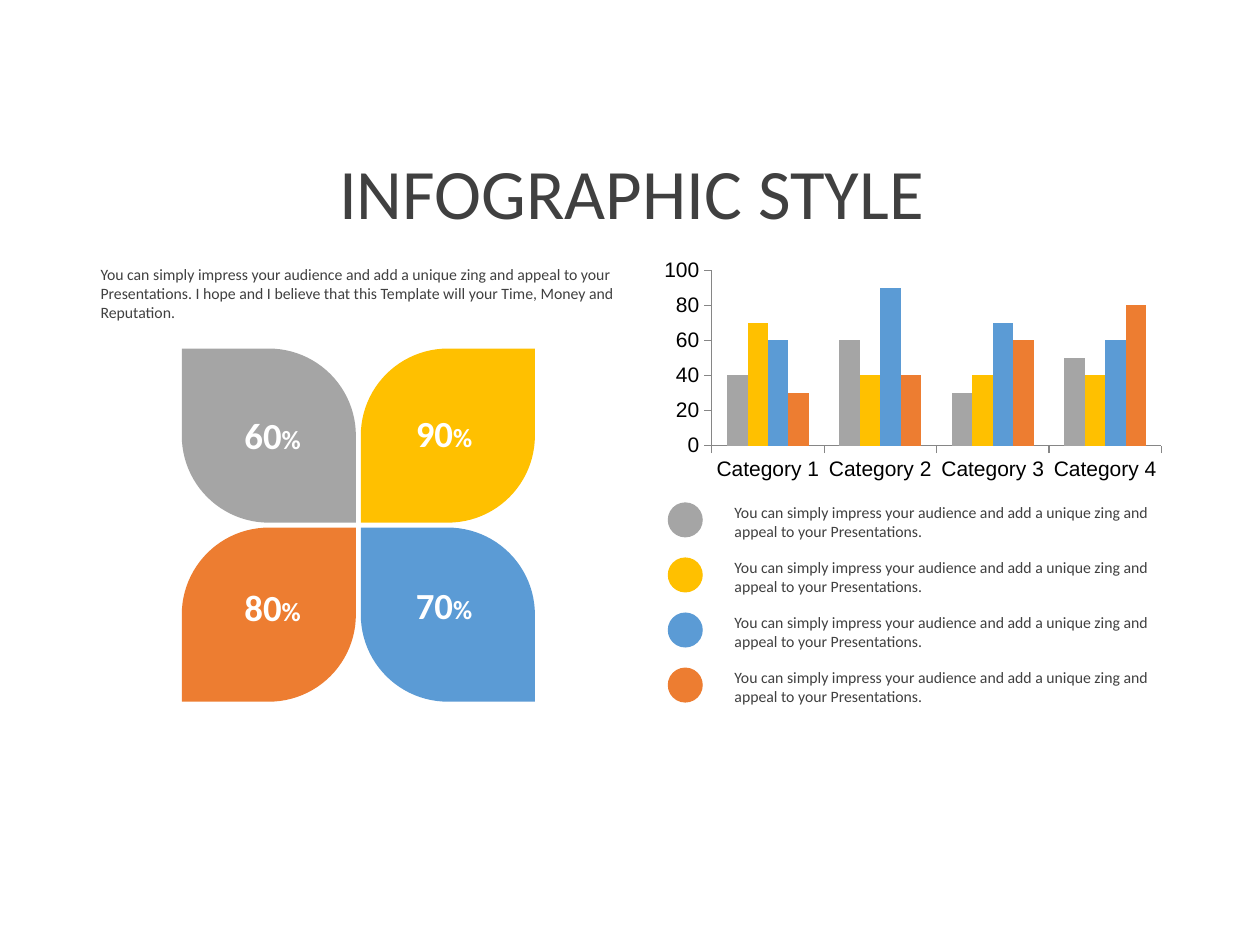
from pptx import Presentation
from pptx.chart.data import CategoryChartData
from pptx.dml.color import RGBColor
from pptx.enum.chart import XL_CHART_TYPE, XL_TICK_MARK
from pptx.enum.shapes import MSO_SHAPE
from pptx.enum.text import MSO_ANCHOR, MSO_AUTO_SIZE, PP_ALIGN
from pptx.util import Pt

GRAY, YELLOW, BLUE, ORANGE = "A5A5A5", "FFC000", "5B9BD5", "ED7D31"
DARK, WHITE, AXIS = "404040", "FFFFFF", "868686"
PITCH = "You can simply impress your audience and add a unique zing and appeal to your Presentations."
INTRO = PITCH + " I hope and I believe that this Template will your Time, Money and Reputation."


def color(hex_code):
    """Turn a hex string into a colour."""
    return RGBColor.from_string(hex_code)


def write(frame, *parts, size=9, ink=DARK, bold=False, align=PP_ALIGN.LEFT,
          anchor=MSO_ANCHOR.TOP):
    """Fill a frame with one paragraph of parts, each a text or a (text, size) pair."""
    frame.word_wrap = True
    frame.auto_size = MSO_AUTO_SIZE.NONE
    frame.vertical_anchor = anchor
    paragraph = frame.paragraphs[0]
    paragraph.alignment = align
    for part in parts:
        text, points = part if isinstance(part, tuple) else (part, size)
        run = paragraph.add_run()
        run.text = text
        run.font.name = "Calibri"
        run.font.size = Pt(points)
        run.font.bold = bold
        run.font.color.rgb = color(ink)


def add_text(slide, box, *parts, **style):
    """Add a text box in the given box."""
    write(slide.shapes.add_textbox(*map(Pt, box)).text_frame, *parts, **style)


def add_solid(slide, kind, box, fill):
    """Add a filled preset shape with no outline."""
    solid = slide.shapes.add_shape(kind, *map(Pt, box))
    solid.shadow.inherit = False
    solid.fill.solid()
    solid.fill.fore_color.rgb = color(fill)
    solid.line.fill.background()
    return solid


def add_title(slide, box):
    """Place and format the slide title."""
    title = slide.shapes.title
    title.left, title.top, title.width, title.height = map(Pt, box)
    frame = title.text_frame
    frame.margin_left = frame.margin_right = Pt(5)
    frame.margin_top = frame.margin_bottom = Pt(2.7)
    write(frame, "INFOGRAPHIC STYLE", size=40.5, align=PP_ALIGN.CENTER,
          anchor=MSO_ANCHOR.MIDDLE)


def add_petals(slide, box):
    """Draw a two by two flower of petals with their percentages."""
    left, top, width, height = box
    gap = 2.8
    side_x, side_y = (width - gap) / 2, (height - gap) / 2
    petals = [("60", GRAY), ("90", YELLOW), ("80", ORANGE), ("70", BLUE)]
    for index, (share, fill) in enumerate(petals):
        row, column = divmod(index, 2)
        petal = add_solid(slide, MSO_SHAPE.ROUND_2_DIAG_RECTANGLE,
                          (left + column * (side_x + gap), top + row * (side_y + gap),
                           side_x, side_y), fill)
        rounded = 0.5 if row != column else 0
        petal.adjustments[0] = rounded
        petal.adjustments[1] = 0.5 - rounded
        add_text(slide, (left + 24.2 + 98 * column, top + 33.2 + 98 * row - column, 55.4, 32.4),
                 share, ("%", 15), size=21, ink=WHITE, bold=True,
                 align=PP_ALIGN.CENTER, anchor=MSO_ANCHOR.MIDDLE)


def add_columns(slide, box):
    """Add the clustered column chart."""
    series = [((40, 60, 30, 50), GRAY), ((70, 40, 40, 40), YELLOW),
              ((60, 90, 70, 60), BLUE), ((30, 40, 60, 80), ORANGE)]
    data = CategoryChartData()
    data.categories = [f"Category {number}" for number in range(1, 5)]
    for number, (values, _) in enumerate(series, 1):
        data.add_series(f"Series {number}", values)
    chart = slide.shapes.add_chart(XL_CHART_TYPE.COLUMN_CLUSTERED, *map(Pt, box), data).chart
    chart.has_legend = False
    chart.has_title = False
    chart.font.name = "Calibri"
    chart.font.size = Pt(18)
    chart.font.color.rgb = color("000000")
    plot = chart.plots[0]
    plot.gap_width = 150
    plot.overlap = 0
    plot.vary_by_categories = False
    for columns, (_, fill) in zip(plot.series, series):
        columns.format.fill.solid()
        columns.format.fill.fore_color.rgb = color(fill)
    for axis in (chart.category_axis, chart.value_axis):
        axis.has_major_gridlines = False
        axis.major_tick_mark = XL_TICK_MARK.OUTSIDE
        axis.minor_tick_mark = XL_TICK_MARK.NONE
        axis.format.line.color.rgb = color(AXIS)
        axis.format.line.width = Pt(0.75)
        axis.tick_labels.font.name = "Arial"
        axis.tick_labels.font.size = Pt(12)
        axis.tick_labels.font.color.rgb = color("000000")
    chart.value_axis.minimum_scale = 0
    chart.value_axis.maximum_scale = 100
    chart.value_axis.major_unit = 20


def add_key(slide, box):
    """List the series colours, each with its description."""
    left, top, width, height = box
    fills = (GRAY, YELLOW, BLUE, ORANGE)
    text_height = 28.8
    step = (height - text_height) / (len(fills) - 1)
    for row, fill in enumerate(fills):
        row_top = top + row * step
        add_solid(slide, MSO_SHAPE.OVAL, (left, row_top + 3.4, 20, 20), fill)
        add_text(slide, (left + 31, row_top, width - 31, text_height), PITCH)


def main():
    """Build and save the slide."""
    deck = Presentation()
    deck.slide_width, deck.slide_height = Pt(720), Pt(540)
    slide = deck.slides.add_slide(deck.slide_layouts[5])
    add_title(slide, (19.4, 87.8, 683.3, 42.5))
    add_text(slide, (50.4, 147.6, 309.6, 40.3), INTRO)
    add_petals(slide, (103.9, 199.2, 201.8, 201.8))
    add_columns(slide, (373.7, 145.4, 295.9, 131.8))
    add_key(slide, (381.6, 283.7, 289.5, 123.2))
    deck.save("out.pptx")


if __name__ == "__main__":
    main()
